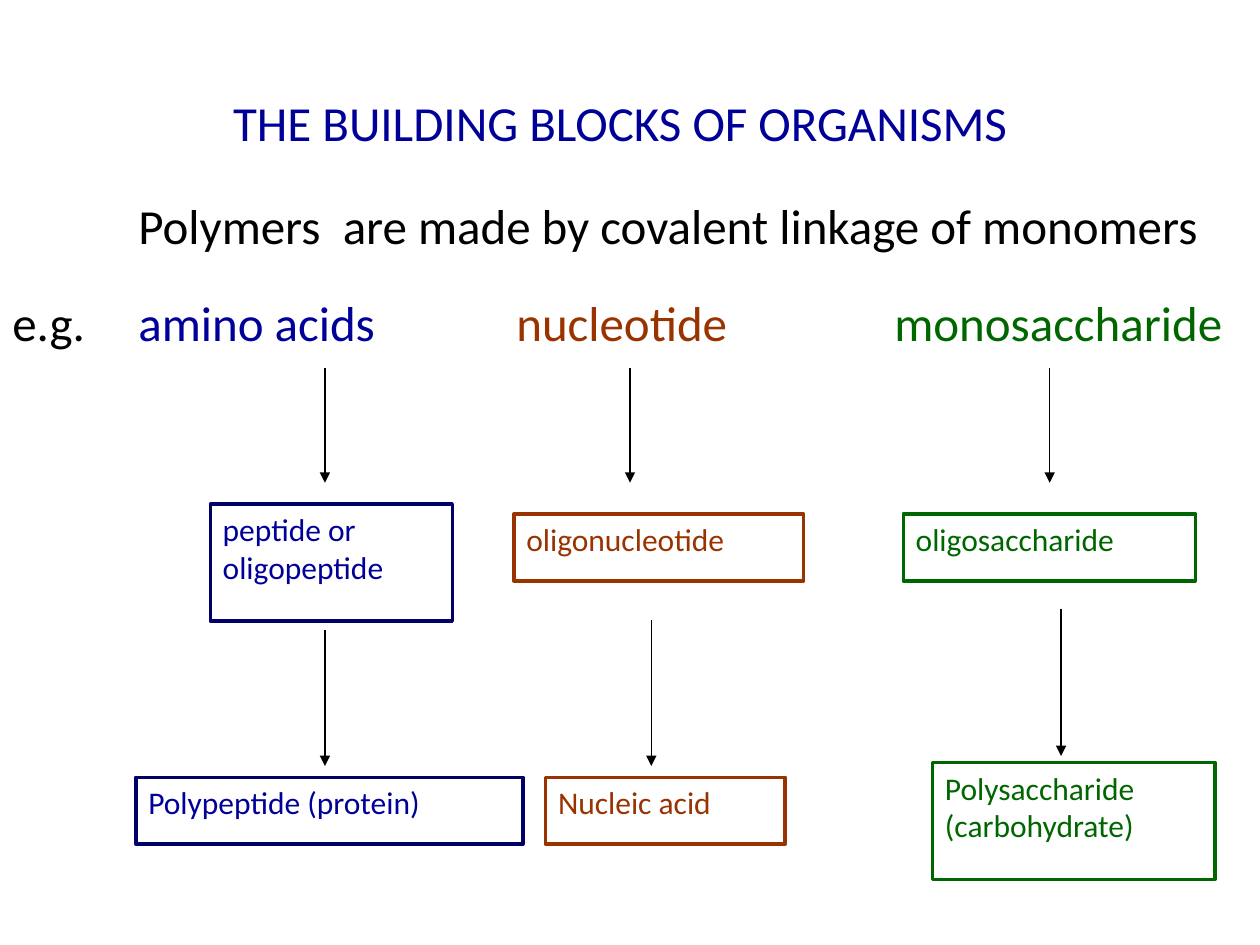
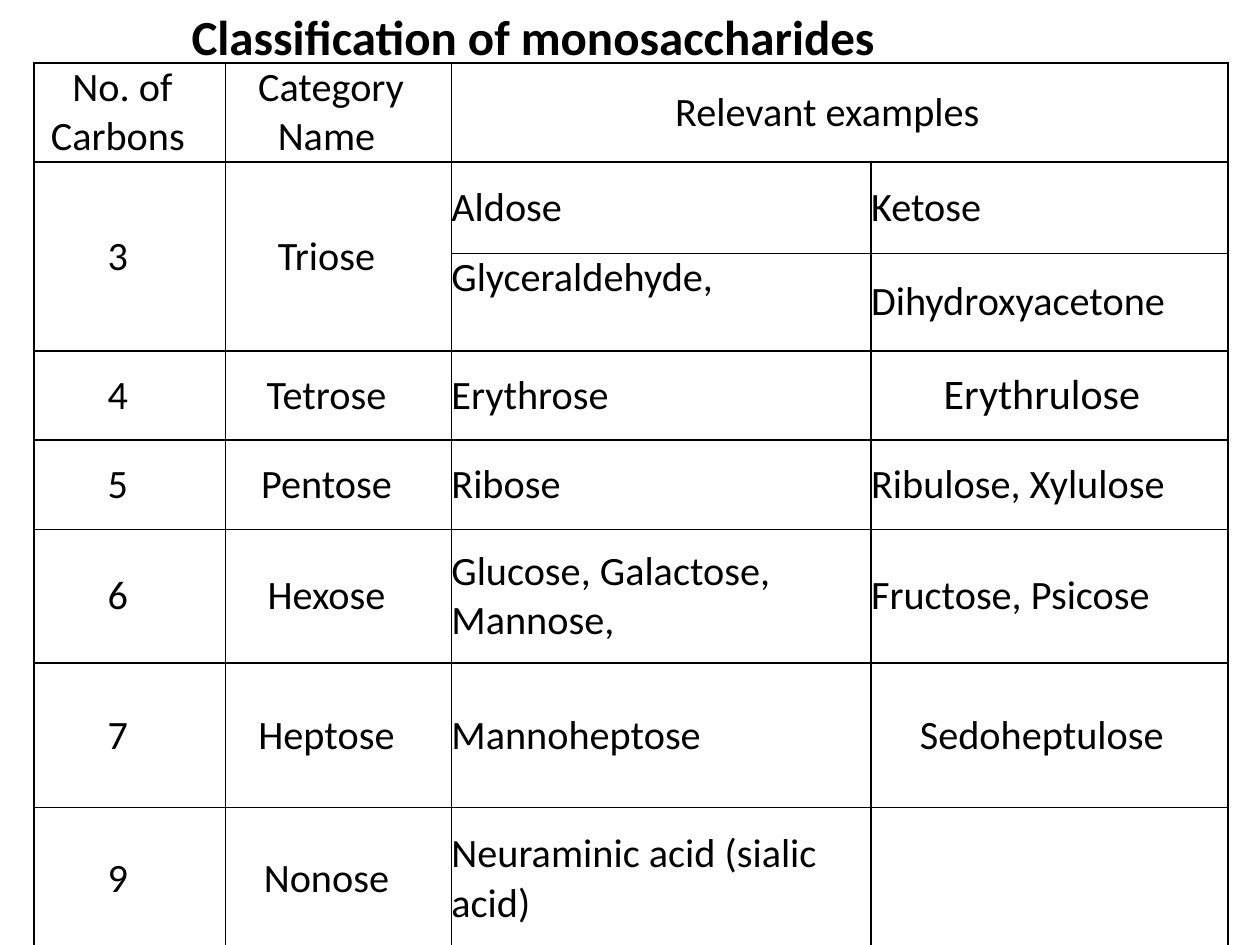
from lxml import etree
from pptx import Presentation
from pptx.dml.color import RGBColor
from pptx.enum.shapes import MSO_CONNECTOR, MSO_SHAPE
from pptx.enum.text import MSO_ANCHOR, PP_ALIGN
from pptx.oxml.ns import qn
from pptx.util import Cm, Pt

STRAIGHT = MSO_CONNECTOR.STRAIGHT
RECTANGLE = MSO_SHAPE.RECTANGLE
TOP, MIDDLE = MSO_ANCHOR.TOP, MSO_ANCHOR.MIDDLE
LEFT, CENTER = PP_ALIGN.LEFT, PP_ALIGN.CENTER

FONT = "Calibri"
BLACK, BLUE, NAVY, BROWN, GREEN = "000000", "000099", "000066", "993300", "006600"
HEADING_SIZE, BOX_SIZE, CELL_SIZE = 28, 18, 23


def rgb(value):
    return RGBColor.from_string(value)


def style_text(frame, size, color, align=LEFT, bold=False):
    for para in frame.paragraphs:
        para.alignment = align
        for span in para.runs:
            span.font.name = FONT
            span.font.size = Pt(size)
            span.font.bold = bold
            span.font.color.rgb = rgb(color)


deck = Presentation()
deck.slide_width, deck.slide_height = Cm(25.4), Cm(19.05)
blank = deck.slide_layouts[6]

page = deck.slides.add_slide(blank)

intro = page.shapes.add_textbox(Cm(0), Cm(3.81), Cm(25.4), Cm(8.89)).text_frame
intro.word_wrap = True
intro.text = "\tPolymers  are made by covalent linkage of monomers"
monomers = intro.add_paragraph()
monomers.space_before = Pt(22)
for text in ("e.g.", "\tamino acids", "\tnucleotide", "\tmonosaccharide"):
    monomers.add_run().text = text
style_text(intro, HEADING_SIZE, BLACK)
for span, color in zip(monomers.runs, (BLACK, BLUE, BROWN, GREEN)):
    span.font.color.rgb = rgb(color)
for para in intro.paragraphs:
    tabs = etree.SubElement(para._p.get_or_add_pPr(), qn("a:tabLst"))
    for stop in (2.54, 10.16, 17.78):
        etree.SubElement(tabs, qn("a:tab"), pos=str(Cm(stop)), algn="l")

title = page.shapes.add_textbox(Cm(4.45), Cm(1.75), Cm(19.2), Cm(1.45)).text_frame
title.text = "THE BUILDING BLOCKS OF ORGANISMS"
title.word_wrap = False
style_text(title, HEADING_SIZE, BLUE)

arrows = [
    (6.55, 7.42, 9.73), (12.7, 7.42, 9.73), (21.16, 7.42, 9.73),
    (6.55, 12.7, 15.44), (13.13, 12.5, 15.44), (21.39, 12.27, 15.24),
]
for x, start, end in arrows:
    arrow = page.shapes.add_connector(STRAIGHT, Cm(x), Cm(start), Cm(x), Cm(end))
    arrow.line.color.rgb = rgb(BLACK)
    arrow.line.width = Pt(0.75)
    etree.SubElement(arrow.line._get_or_add_ln(), qn("a:tailEnd"), type="triangle")
    etree.SubElement(arrow._element.spPr, qn("a:effectLst"))

products = [
    ("peptide or\noligopeptide", 4.24, 10.16, 4.88, 2.36, NAVY, BLUE),
    ("oligonucleotide", 10.36, 10.36, 5.84, 1.35, BROWN, BROWN),
    ("oligosaccharide", 18.21, 10.36, 5.89, 1.35, GREEN, GREEN),
    ("Polypeptide (protein)", 2.74, 15.67, 7.8, 1.35, NAVY, BLUE),
    ("Nucleic acid", 11, 15.67, 4.83, 1.35, BROWN, BROWN),
    ("Polysaccharide\n(carbohydrate)", 18.8, 15.37, 5.69, 2.36, GREEN, GREEN),
]
for text, left, top, width, height, border, color in products:
    box = page.shapes.add_shape(RECTANGLE, Cm(left), Cm(top), Cm(width), Cm(height))
    box.shadow.inherit = False
    box.fill.background()
    box.line.color.rgb = rgb(border)
    box.line.width = Pt(2)
    box.text_frame.text = text
    box.text_frame.vertical_anchor = TOP
    style_text(box.text_frame, BOX_SIZE, color)

page = deck.slides.add_slide(blank)

columns = [3.86, 4.55, 8.46, 7.19]
heights = [1.96, 1.85, 1.96, 1.8, 1.8, 2.69, 2.92, 2.87]
rows = [
    ("No. of Carbons ", "Category Name ", "Relevant examples ", ""),
    ("3 ", "Triose ", "Aldose", "Ketose"),
    ("", "", "Glyceraldehyde,", "Dihydroxyacetone"),
    ("4 ", "Tetrose ", "Erythrose", "Erythrulose"),
    ("5 ", "Pentose ", "Ribose", "Ribulose, Xylulose"),
    ("6 ", "Hexose ", "Glucose, Galactose, Mannose,", "Fructose, Psicose"),
    ("7 ", "Heptose ", "Mannoheptose", "Sedoheptulose"),
    ("9 ", "Nonose ", "Neuraminic acid (sialic acid)", ""),
]
centered = ("Relevant examples ", "Erythrulose", "Sedoheptulose")

table = page.shapes.add_table(
    len(rows), len(columns), Cm(0.69), Cm(1.27), Cm(sum(columns)), Cm(sum(heights))
).table
table.first_row = table.horz_banding = False
for column, width in zip(table.columns, columns):
    column.width = Cm(width)
for row, height in zip(table.rows, heights):
    row.height = Cm(height)

for row_index, row in enumerate(rows):
    for column_index, text in enumerate(row):
        cell = table.cell(row_index, column_index)
        cell.text = text
        cell.margin_left = cell.margin_top = cell.margin_bottom = 0
        cell.margin_right = Cm(0.3)
        cell.vertical_anchor = TOP if text == "Glyceraldehyde," else MIDDLE
        cell.fill.background()
        align = CENTER if column_index < 2 or text in centered else LEFT
        size = 24 if text == "Erythrulose" else CELL_SIZE
        style_text(cell.text_frame, size, BLACK, align)
        properties = cell._tc.get_or_add_tcPr()
        for position, side in enumerate(("a:lnL", "a:lnR", "a:lnT", "a:lnB")):
            border = etree.Element(qn(side), w=str(Pt(1)))
            fill = etree.SubElement(border, qn("a:solidFill"))
            etree.SubElement(fill, qn("a:srgbClr"), val=BLACK)
            properties.insert(position, border)

table.cell(0, 2).merge(table.cell(0, 3))
for column_index in range(2):
    table.cell(1, column_index).merge(table.cell(2, column_index))

title = page.shapes.add_textbox(Cm(1.37), Cm(0), Cm(18.75), Cm(1.45)).text_frame
title.word_wrap = True
title.text = "Classification of monosaccharides"
style_text(title, HEADING_SIZE, BLACK, CENTER, bold=True)

deck.save("out.pptx")
